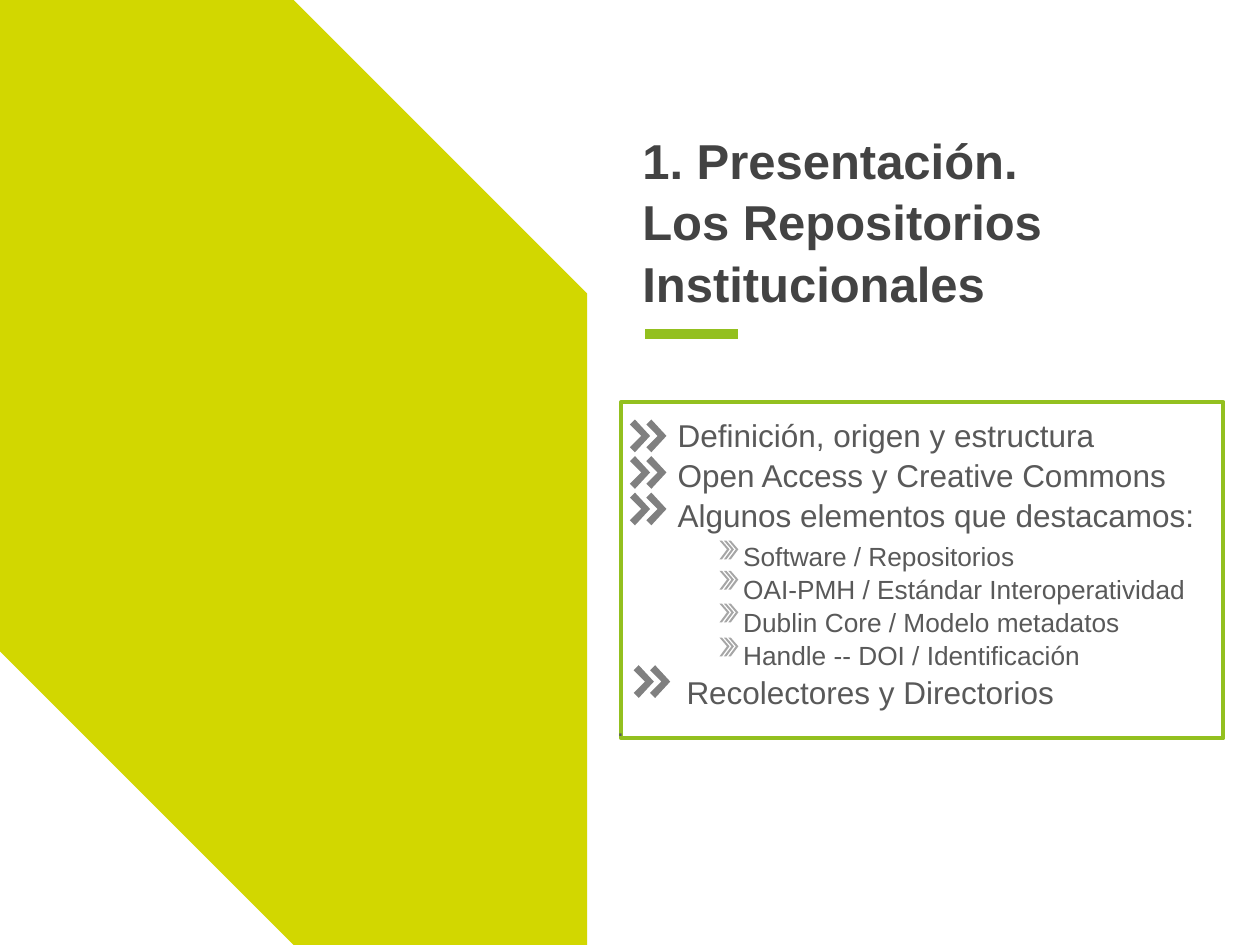
"""Builds the opening slide on institutional repositories."""
from dataclasses import dataclass

import lxml.etree
import pptx
import pptx.dml.color
import pptx.enum.shapes
import pptx.enum.text
import pptx.oxml.ns
import pptx.util

Inches = pptx.util.Inches
Pt = pptx.util.Pt


@dataclass(frozen=True)
class Theme:
    font: str = "Arial"
    lime: str = "D2D700"
    green: str = "93C01F"
    heading: str = "434343"
    body: str = "595959"
    title_size: int = 28
    item_size: int = 18
    detail_size: int = 15
    dot_size: int = 14
    line_spacing: float = 1.05


@dataclass(frozen=True)
class Line:
    text: str
    size: int
    indent: float
    space_before: int = 0


@dataclass(frozen=True)
class Marker:
    outline: tuple[tuple[float, float], ...]
    count: int
    step: float
    color: str


THEME = Theme()
LINES = (
    Line("Definición, origen y estructura", THEME.item_size, 0.48),
    Line("Open Access y Creative Commons", THEME.item_size, 0.48),
    Line("Algunos elementos que destacamos:", THEME.item_size, 0.48),
    Line("Software / Repositorios", THEME.detail_size, 1, 3),
    Line("OAI-PMH / Estándar Interoperatividad", THEME.detail_size, 1),
    Line("Dublin Core / Modelo metadatos", THEME.detail_size, 1),
    Line("Handle -- DOI / Identificación", THEME.detail_size, 1),
    Line("Recolectores y Directorios", THEME.item_size, 0.55),
    Line(".", THEME.dot_size, 0),
)
ITEM_MARKER = Marker(
    ((0.04, 0), (0, 0.04), (0.09, 0.13), (0, 0.22), (0.04, 0.26), (0.16, 0.13)),
    2, 0.13, "808080")
DETAIL_MARKER = Marker(
    ((0, 0), (0.06, 0.07), (0, 0.15), (0.02, 0.15), (0.08, 0.07), (0.02, 0)),
    3, 0.035, "A6A6A6")
MARKER_PLACES = (
    (DETAIL_MARKER, ((5.71, 4.29), (5.71, 4.53), (5.71, 4.79), (5.71, 5.06))),
    (ITEM_MARKER, ((5, 3.33), (5, 3.62), (5, 3.91), (5.03, 5.28))),
)


def rgb(color: str) -> pptx.dml.color.RGBColor:
    """Turn a hex string into a colour."""
    return pptx.dml.color.RGBColor.from_string(color)


def fill_plain(shape, color: str) -> None:
    """Give a shape a flat fill without outline or shadow."""
    shape.shadow.inherit = False
    shape.fill.solid()
    shape.fill.fore_color.rgb = rgb(color)
    shape.line.fill.background()


def add_text_frame(slide, left: float, top: float, width: float, height: float):
    """Add a wrapping text box with even margins and return its frame."""
    frame = slide.shapes.add_textbox(
        Inches(left), Inches(top), Inches(width), Inches(height)).text_frame
    frame.word_wrap = True
    frame.margin_left = frame.margin_right = Inches(0.1)
    frame.margin_top = frame.margin_bottom = Inches(0.1)
    return frame


def style_paragraph(para, size: int, color: str, bold: bool = False) -> None:
    """Set the line spacing and font of a paragraph."""
    para.line_spacing = THEME.line_spacing
    para.font.name = THEME.font
    para.font.size = Pt(size)
    para.font.bold = bold
    para.font.color.rgb = rgb(color)


def add_panel(slide) -> None:
    """Draw the lime panel with two cut corners."""
    panel = slide.shapes.add_shape(
        pptx.enum.shapes.MSO_SHAPE.SNIP_2_DIAG_RECTANGLE,
        0, 0, Inches(4.66), Inches(7.5))
    panel.adjustments[0] = 0
    panel.adjustments[1] = 0.5
    fill_plain(panel, THEME.lime)


def add_title(slide) -> None:
    """Write the title and the short rule under it."""
    rule = slide.shapes.add_connector(
        pptx.enum.shapes.MSO_CONNECTOR.STRAIGHT,
        Inches(5.12), Inches(2.65), Inches(5.86), Inches(2.65))
    rule.line.color.rgb = rgb(THEME.green)
    rule.line.width = Pt(6)
    properties = rule._element.spPr
    lxml.etree.SubElement(properties, pptx.oxml.ns.qn("a:effectLst"))

    frame = add_text_frame(slide, 5, 1, 3.93, 1.58)
    frame.vertical_anchor = pptx.enum.text.MSO_ANCHOR.BOTTOM
    para = frame.paragraphs[0]
    para.text = "1. Presentación. Los Repositorios Institucionales"
    style_paragraph(para, THEME.title_size, THEME.heading, bold=True)


def add_contents(slide) -> None:
    """Draw the frame and the list of topics."""
    border = slide.shapes.add_shape(
        pptx.enum.shapes.MSO_SHAPE.RECTANGLE,
        Inches(4.93), Inches(3.19), Inches(4.78), Inches(2.67))
    border.shadow.inherit = False
    border.fill.background()
    border.line.color.rgb = rgb(THEME.green)
    border.line.width = Pt(2.25)

    frame = add_text_frame(slide, 4.8, 3.19, 4.91, 2.65)
    for index, line in enumerate(LINES):
        para = frame.add_paragraph() if index else frame.paragraphs[0]
        para.text = line.text
        para._p.get_or_add_pPr().set("marL", str(Inches(line.indent)))
        if line.space_before:
            para.space_before = Pt(line.space_before)
        style_paragraph(para, line.size, THEME.body)


def add_marker(slide, marker: Marker, left: float, top: float) -> None:
    """Draw one group of overlapping chevrons."""
    group = slide.shapes.add_group_shape()
    for index in range(marker.count):
        start, *rest = [
            (Inches(left + index * marker.step + x), Inches(top + y))
            for x, y in marker.outline]
        builder = group.shapes.build_freeform(*start)
        builder.add_line_segments(rest, close=True)
        fill_plain(builder.convert_to_shape(), marker.color)


def main() -> None:
    """Build and save the deck."""
    deck = pptx.Presentation()
    deck.slide_width = Inches(10)
    deck.slide_height = Inches(7.5)
    slide = deck.slides.add_slide(deck.slide_layouts[6])
    add_panel(slide)
    add_title(slide)
    add_contents(slide)
    for marker, places in MARKER_PLACES:
        for left, top in places:
            add_marker(slide, marker, left, top)
    deck.save("out.pptx")


if __name__ == "__main__":
    main()
